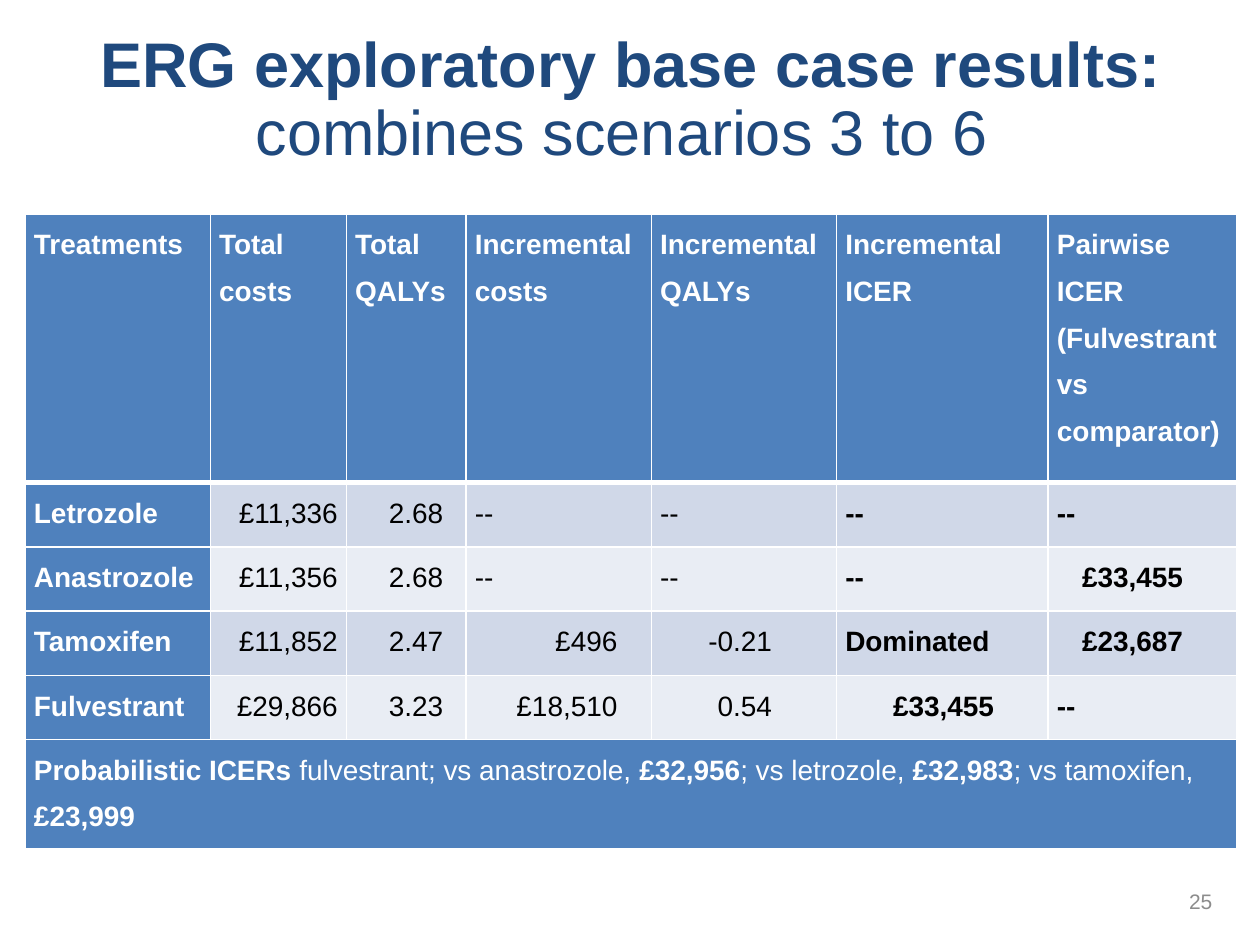
import pptx
import pptx.dml.color
import pptx.enum.text
import pptx.oxml
import pptx.oxml.ns
import pptx.util

Inches, Pt = pptx.util.Inches, pptx.util.Pt
RGBColor = pptx.dml.color.RGBColor
PP_ALIGN = pptx.enum.text.PP_ALIGN
MSO_ANCHOR = pptx.enum.text.MSO_ANCHOR

# Content
TITLE = [("ERG exploratory base case results: ", True),
         ("combines scenarios 3 to 6 ", False)]
HEADERS = ["Treatments", "Total costs", "Total QALYs", "Incremental costs",
           "Incremental QALYs", "Incremental ICER",
           "Pairwise ICER (Fulvestrant vs comparator)"]
RESULTS = [
    ["Letrozole", "£11,336", "2.68", "--", "--", "--", "--"],
    ["Anastrozole", "£11,356", "2.68", "--", "--", "--", "£33,455"],
    ["Tamoxifen", "£11,852", "2.47", "£496", "-0.21", "Dominated", "£23,687"],
    ["Fulvestrant", "£29,866", "3.23", "£18,510", "0.54", "£33,455", "--"],
]
SUMMARY = [("Probabilistic ICERs ", True), ("fulvestrant; vs anastrozole, ", False),
           ("£32,956", True), ("; vs letrozole, ", False), ("£32,983", True),
           ("; vs tamoxifen, ", False), ("£23,999", True)]
PAGE_NUMBER = "25"

# Style
FONT = "Arial"
NAVY = RGBColor(0x1F, 0x49, 0x7D)
BLUE = RGBColor(0x4F, 0x81, 0xBD)
BANDS = [RGBColor(0xD0, 0xD8, 0xE8), RGBColor(0xE9, 0xED, 0xF4)]
WHITE = RGBColor(0xFF, 0xFF, 0xFF)
BLACK = RGBColor(0, 0, 0)
GRAY = RGBColor(0x8C, 0x8C, 0x8C)

# Table grid, in inches
COLUMN_WIDTHS = [1.47, 1.08, 0.95, 1.47, 1.47, 1.68, 1.5]
ROW_HEIGHTS = [2.13] + [0.51] * len(RESULTS) + [0.87]
CELL_INSET = 0.07
BOLD_COLUMNS = {0, 5, 6}
DECIMAL_TABS = {2: 0.39, 4: 0.58}
RIGHT_INSETS = {3: 0.27, 5: 0.43, 6: 0.43}  # inset of right-aligned amounts


def write_runs(paragraph, runs, size, color):
    for text, bold in runs:
        run = paragraph.add_run()
        run.text = text
        run.font.name, run.font.size, run.font.bold = FONT, Pt(size), bold
        run.font.color.rgb = color


def add_text(slide, box, runs, size, color, alignment):
    shape = slide.shapes.add_textbox(*(Inches(value) for value in box))
    shape.text_frame.word_wrap = True
    shape.text_frame.vertical_anchor = MSO_ANCHOR.MIDDLE
    paragraph = shape.text_frame.paragraphs[0]
    paragraph.alignment = alignment
    write_runs(paragraph, runs, size, color)
    return paragraph


def add_borders(cell, top, bottom):
    properties = cell._tc.get_or_add_tcPr()
    for side, width in (("L", 1), ("R", 1), ("T", top), ("B", bottom)):
        properties.append(pptx.oxml.parse_xml(
            f'<a:ln{side} {pptx.oxml.ns.nsdecls("a")} w="{Pt(width)}">'
            f'<a:solidFill><a:srgbClr val="{WHITE}"/></a:solidFill></a:ln{side}>'))


def add_decimal_tab(paragraph, position):
    paragraph._p.get_or_add_pPr().append(pptx.oxml.parse_xml(
        f'<a:tabLst {pptx.oxml.ns.nsdecls("a")}>'
        f'<a:tab pos="{Inches(position)}" algn="dec"/></a:tabLst>'))


def fill_cell(cell, runs, fill, color, top=1, bottom=1):
    add_borders(cell, top, bottom)
    cell.fill.solid()
    cell.fill.fore_color.rgb = fill
    cell.margin_left = cell.margin_right = Inches(CELL_INSET)
    cell.margin_top = cell.margin_bottom = 0
    paragraph = cell.text_frame.paragraphs[0]
    paragraph.line_spacing = 1.5
    write_runs(paragraph, runs, 16, color)
    return paragraph


def fill_result(cell, value, row, column):
    top = 3 if row == 0 else 1
    if column == 0:
        fill_cell(cell, [(value, True)], BLUE, WHITE, top)
        return
    is_decimal = column in DECIMAL_TABS and value != "--"
    text = "\t" + value if is_decimal else value
    paragraph = fill_cell(cell, [(text, column in BOLD_COLUMNS)],
                          BANDS[row % 2], BLACK, top)
    if is_decimal:
        add_decimal_tab(paragraph, DECIMAL_TABS[column])
    elif value.startswith("£"):
        paragraph.alignment = PP_ALIGN.RIGHT
        cell.margin_right = Inches(RIGHT_INSETS.get(column, CELL_INSET))


def add_results_table(slide):
    frame = slide.shapes.add_table(
        len(ROW_HEIGHTS), len(COLUMN_WIDTHS), Inches(0.2), Inches(1.7),
        Inches(sum(COLUMN_WIDTHS)), Inches(sum(ROW_HEIGHTS)))
    table = frame.table
    table.first_row = table.horz_banding = False
    for column, width in zip(table.columns, COLUMN_WIDTHS):
        column.width = Inches(width)
    for row, height in zip(table.rows, ROW_HEIGHTS):
        row.height = Inches(height)

    for column, header in enumerate(HEADERS):
        fill_cell(table.cell(0, column), [(header, True)], BLUE, WHITE, bottom=3)
    for row, values in enumerate(RESULTS):
        for column, value in enumerate(values):
            fill_result(table.cell(row + 1, column), value, row, column)

    # Summary row across all columns
    last_row = len(ROW_HEIGHTS) - 1
    summary = table.cell(last_row, 0)
    summary.merge(table.cell(last_row, len(HEADERS) - 1))
    fill_cell(summary, SUMMARY, BLUE, WHITE)


def main():
    presentation = pptx.Presentation()
    presentation.slide_width, presentation.slide_height = Inches(10), Inches(7.5)
    slide = presentation.slides.add_slide(presentation.slide_layouts[6])

    title = add_text(slide, (0.28, 0.29, 9.45, 1.03), TITLE, 36, NAVY, PP_ALIGN.CENTER)
    title.line_spacing = 0.9
    add_results_table(slide)
    add_text(slide, (7.47, 6.95, 2.25, 0.4), [(PAGE_NUMBER, False)], 12, GRAY,
             PP_ALIGN.RIGHT)
    presentation.save("out.pptx")


if __name__ == "__main__":
    main()
